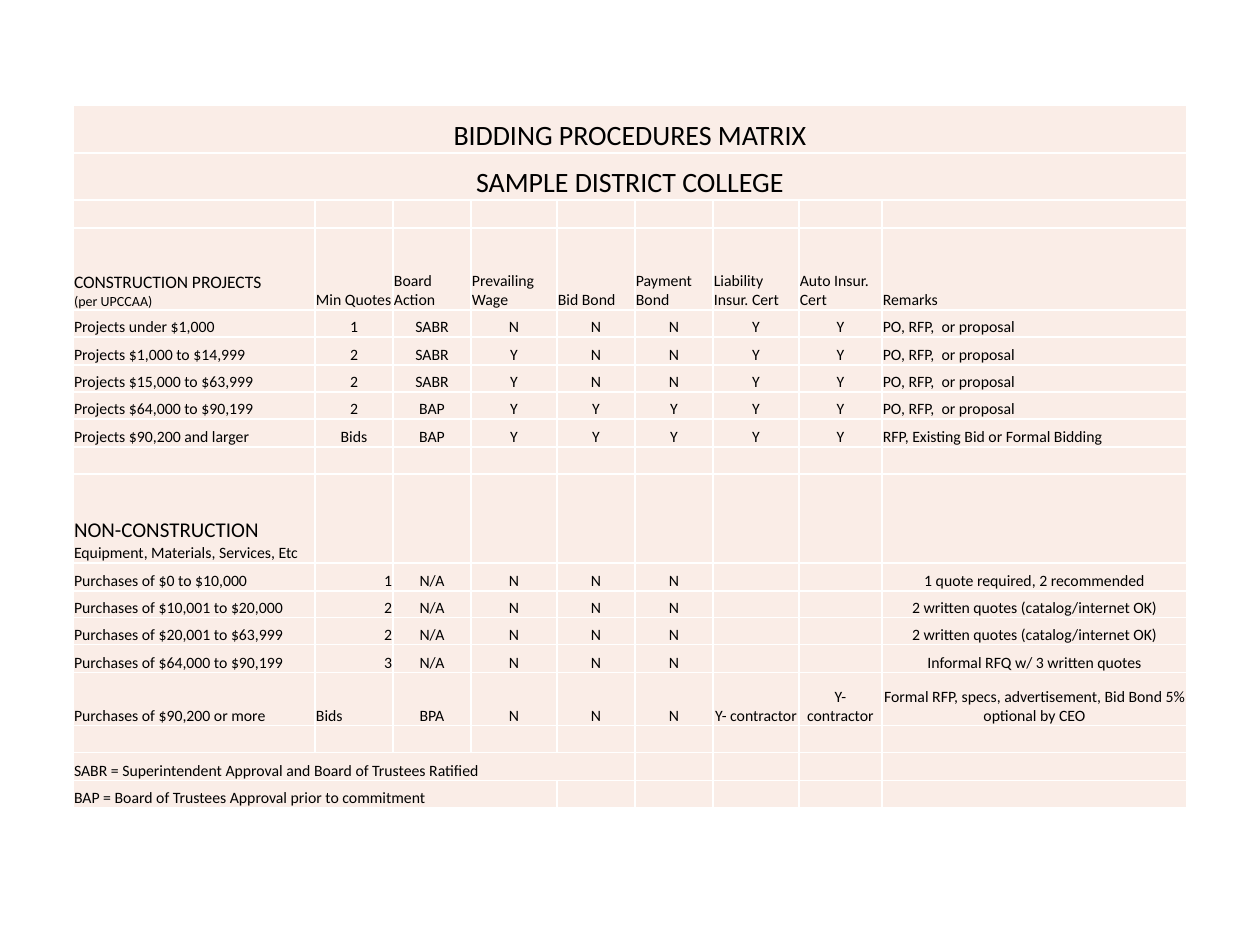
from lxml.etree import SubElement
from pptx import Presentation
from pptx.dml.color import RGBColor
from pptx.enum.text import MSO_ANCHOR as Anchor, PP_ALIGN as Align
from pptx.oxml.ns import qn
from pptx.util import Pt

PX = 914400 // 126
BLACK = RGBColor(0x00, 0x00, 0x00)
WHITE = RGBColor(0xFF, 0xFF, 0xFF)
BLUSH = RGBColor(0xFA, 0xED, 0xE7)
FONT = "Calibri"

COLUMN_WIDTHS = [242, 78, 78, 86, 78, 78, 86, 83, 305]
ROW_HEIGHTS = [48, 47, 28, 82, 27, 28, 27, 27, 28, 27, 89, 28, 27, 27, 28, 53, 27, 28, 27]
ALIGNMENTS = {"L": Align.LEFT, "C": Align.CENTER, "R": Align.RIGHT}

TITLES = ["BIDDING PROCEDURES MATRIX", "SAMPLE DISTRICT COLLEGE"]
HEADINGS = ["CONSTRUCTION PROJECTS\n(per UPCCAA)", "Min Quotes", "Board Action", "Prevailing Wage",
            "Bid Bond", "Payment Bond", "Liability Insur. Cert", "Auto Insur. Cert", "Remarks"]
CONSTRUCTION = [
    ["Projects under $1,000", "1", "SABR", "N", "N", "N", "Y", "Y", "PO, RFP,  or proposal"],
    ["Projects $1,000 to $14,999", "2", "SABR", "Y", "N", "N", "Y", "Y", "PO, RFP,  or proposal"],
    ["Projects $15,000 to $63,999", "2", "SABR", "Y", "N", "N", "Y", "Y", "PO, RFP,  or proposal"],
    ["Projects $64,000 to $90,199", "2", "BAP", "Y", "Y", "Y", "Y", "Y", "PO, RFP,  or proposal"],
    ["Projects $90,200 and larger", "Bids", "BAP", "Y", "Y", "Y", "Y", "Y",
     "RFP, Existing Bid or Formal Bidding"],
]
PURCHASES_HEADING = "NON-CONSTRUCTION\nEquipment, Materials, Services, Etc"
PURCHASES = [
    ["Purchases of $0 to $10,000", "1", "N/A", "N", "N", "N", "", "",
     "1 quote required, 2 recommended"],
    ["Purchases of $10,001 to $20,000", "2", "N/A", "N", "N", "N", "", "",
     "2 written quotes (catalog/internet OK)"],
    ["Purchases of $20,001 to $63,999", "2", "N/A", "N", "N", "N", "", "",
     "2 written quotes (catalog/internet OK)"],
    ["Purchases of $64,000 to $90,199", "3", "N/A", "N", "N", "N", "", "",
     "Informal RFQ w/ 3 written quotes"],
]
LARGE_PURCHASE = ["Purchases of $90,200 or more", "Bids", "BPA", "N", "N", "N", "Y- contractor",
                  "Y- contractor", "Formal RFP, specs, advertisement, Bid Bond 5% optional by CEO"]
LEGEND = [("SABR = Superintendent Approval and Board of Trustees Ratified", 5),
          ("BAP = Board of Trustees Approval prior to commitment", 4)]


def add_borders(cell, color=WHITE, width=1):
    """Draw the four borders of a cell."""
    properties = cell._tc.get_or_add_tcPr()
    for position, side in enumerate(("a:lnL", "a:lnR", "a:lnT", "a:lnB")):
        line = SubElement(properties, qn(side), w=str(Pt(width)))
        properties.insert(position, line)
        fill = SubElement(line, qn("a:solidFill"))
        SubElement(fill, qn("a:srgbClr"), val=str(color))


def style_cell(cell):
    """Give a cell its fill, borders, margins and compact empty line."""
    cell.fill.solid()
    cell.fill.fore_color.rgb = BLUSH
    add_borders(cell)
    cell.margin_left = cell.margin_right = cell.margin_top = PX
    cell.margin_bottom = 0
    cell.vertical_anchor = Anchor.BOTTOM
    SubElement(cell.text_frame.paragraphs[0]._p, qn("a:endParaRPr"), sz="900")


def write_text(cell, text, sizes=(9,), align=Align.LEFT, color=BLACK):
    """Write lines of text into a cell, one font size per line."""
    paragraph = cell.text_frame.paragraphs[0]
    paragraph.alignment = align
    for number, (line, size) in enumerate(zip(text.split("\n"), sizes)):
        if number:
            paragraph.add_line_break()
        run = paragraph.add_run()
        run.text = line
        run.font.name = FONT
        run.font.size = Pt(size)
        run.font.color.rgb = color


def write_row(table, row, texts, alignments="LLLLLLLLL", lead_sizes=(9,)):
    """Fill a row, with one alignment letter per column."""
    for column, (text, letter) in enumerate(zip(texts, alignments)):
        if text:
            sizes = (9,) if column else lead_sizes
            write_text(table.cell(row, column), text, sizes=sizes, align=ALIGNMENTS[letter])


def write_merged(table, row, text, span, **text_format):
    """Merge the first cells of a row and write text across them."""
    cell = table.cell(row, 0)
    cell.merge(table.cell(row, span - 1))
    write_text(cell, text, **text_format)


def add_matrix(slide):
    """Add the empty styled table."""
    frame = slide.shapes.add_table(
        len(ROW_HEIGHTS), len(COLUMN_WIDTHS), 73 * PX, 105 * PX,
        sum(COLUMN_WIDTHS) * PX, sum(ROW_HEIGHTS) * PX)
    table = frame.table
    table.first_row = table.horz_banding = False
    for column, width in zip(table.columns, COLUMN_WIDTHS):
        column.width = width * PX
    for row, height in zip(table.rows, ROW_HEIGHTS):
        row.height = height * PX
    for cell in table.iter_cells():
        style_cell(cell)
    return table


def main():
    """Build the bidding procedures slide."""
    presentation = Presentation()
    presentation.slide_width, presentation.slide_height = 1260 * PX, 945 * PX
    slide = presentation.slides.add_slide(presentation.slide_layouts[6])
    table = add_matrix(slide)
    for row, title in enumerate(TITLES):
        write_merged(table, row, title, len(COLUMN_WIDTHS), sizes=(16,), align=Align.CENTER)
    write_row(table, 3, HEADINGS, lead_sizes=(10, 8))
    for row, texts in enumerate(CONSTRUCTION, start=4):
        write_row(table, row, texts, "LCCCCCCCL")
    write_row(table, 10, [PURCHASES_HEADING], lead_sizes=(12, 9))
    for row, texts in enumerate(PURCHASES, start=11):
        write_row(table, row, texts, "LRCCCCCCC")
    write_row(table, 15, LARGE_PURCHASE, "LLCCCCCCC")
    for row, (text, span) in enumerate(LEGEND, start=17):
        write_merged(table, row, text, span)
    presentation.save("out.pptx")


if __name__ == "__main__":
    main()
